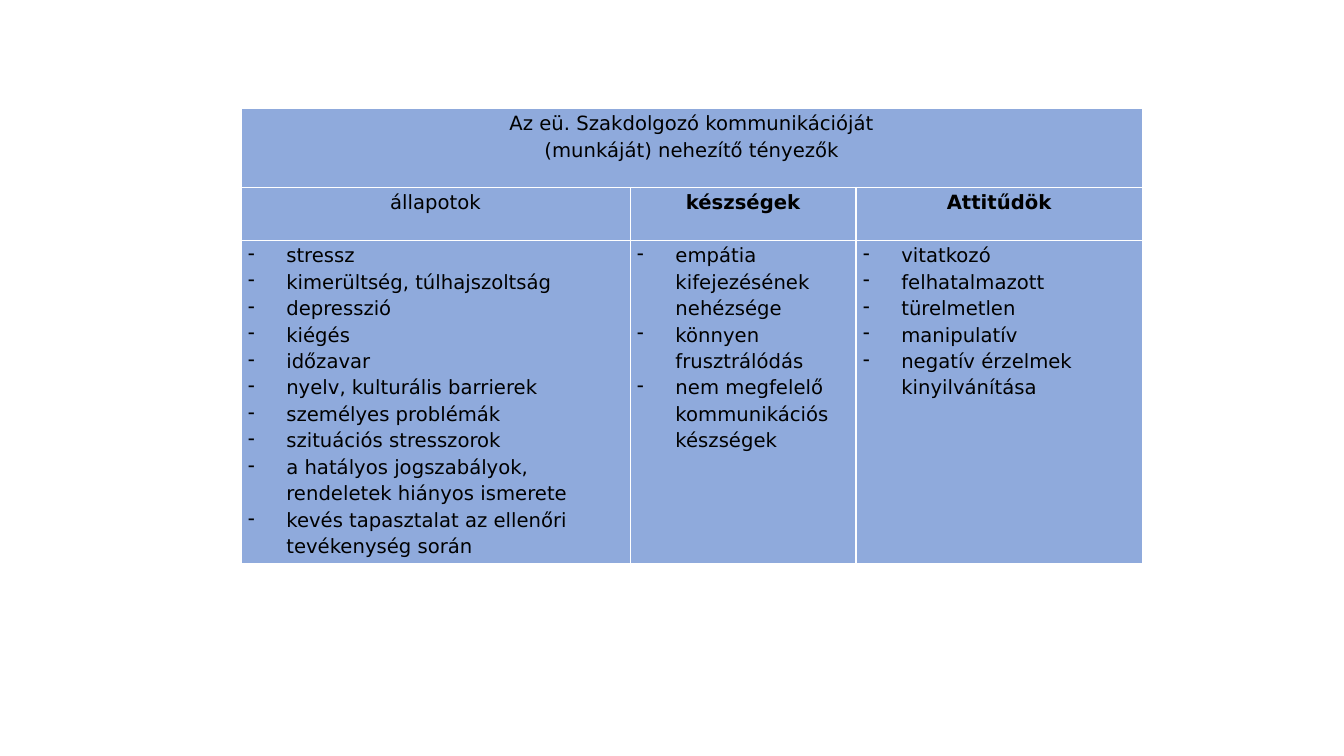
from lxml import etree
from pptx import Presentation
from pptx.dml.color import RGBColor
from pptx.enum.text import PP_ALIGN
from pptx.oxml.ns import qn
from pptx.util import Inches, Pt

CENTER, LEFT = PP_ALIGN.CENTER, PP_ALIGN.LEFT
BLUE = RGBColor(0x8F, 0xAA, 0xDC)
BLACK = RGBColor(0, 0, 0)
WHITE = RGBColor(0xFF, 0xFF, 0xFF)
FONT = "DejaVu Sans"
INDENT = Inches(0.38)
BORDER = Pt(1)

COLUMN_WIDTHS = [3.86, 2.24, 2.84]
ROW_HEIGHTS = [0.78, 0.53, 3.2]
HEADING = ["Az eü. Szakdolgozó kommunikációját", "(munkáját) nehezítő tényezők"]
FACTORS = {
    "állapotok": [
        "stressz",
        "kimerültség, túlhajszoltság",
        "depresszió",
        "kiégés",
        "időzavar",
        "nyelv, kulturális barrierek",
        "személyes problémák",
        "szituációs stresszorok",
        "a hatályos jogszabályok, rendeletek hiányos ismerete",
        "kevés tapasztalat az ellenőri tevékenység során",
    ],
    "készségek": [
        "empátia kifejezésének nehézsége",
        "könnyen frusztrálódás",
        "nem megfelelő kommunikációs készségek",
    ],
    "Attitűdök": [
        "vitatkozó",
        "felhatalmazott",
        "türelmetlen",
        "manipulatív",
        "negatív érzelmek kinyilvánítása",
    ],
}


def write(cell, lines, align=CENTER, bold=False, bullet=None):
    frame = cell.text_frame
    frame.text = "\n".join(lines)
    for paragraph in frame.paragraphs:
        paragraph.alignment = align
        paragraph.line_spacing = 1.15
        font = paragraph.runs[0].font
        font.name, font.size, font.bold = FONT, Pt(14), bold
        font.color.rgb = BLACK
        if bullet:
            properties = paragraph._p.get_or_add_pPr()
            properties.set("marL", str(INDENT))
            properties.set("indent", str(-INDENT))
            etree.SubElement(properties, qn("a:buChar"), char=bullet)


def style_cell(cell):
    """Give the cell its margins, white borders and blue fill."""
    cell.margin_left = cell.margin_right = Inches(0.07)
    cell.margin_top = cell.margin_bottom = 0
    properties = cell._tc.get_or_add_tcPr()
    for side in ("a:lnL", "a:lnR", "a:lnT", "a:lnB"):
        line = etree.SubElement(properties, qn(side), w=str(BORDER))
        solid = etree.SubElement(line, qn("a:solidFill"))
        etree.SubElement(solid, qn("a:srgbClr"), val=str(WHITE))
    cell.fill.solid()
    cell.fill.fore_color.rgb = BLUE


prs = Presentation()
prs.slide_width, prs.slide_height = Inches(13.33), Inches(7.5)
blank_layout = prs.slide_layouts[6]
slide = prs.slides.add_slide(blank_layout)

factors_table = slide.shapes.add_table(
    len(ROW_HEIGHTS), len(COLUMN_WIDTHS), Inches(2.39), Inches(1.08),
    Inches(sum(COLUMN_WIDTHS)), Inches(sum(ROW_HEIGHTS))).table
for column, width in zip(factors_table.columns, COLUMN_WIDTHS):
    column.width = Inches(width)
for row, height in zip(factors_table.rows, ROW_HEIGHTS):
    row.height = Inches(height)
for cell in factors_table.iter_cells():
    style_cell(cell)

heading_cell = factors_table.cell(0, 0)
heading_cell.merge(factors_table.cell(0, len(COLUMN_WIDTHS) - 1))
write(heading_cell, HEADING)
for index, (group, factors) in enumerate(FACTORS.items()):
    write(factors_table.cell(1, index), [group], bold=index > 0)
    write(factors_table.cell(2, index), factors, align=LEFT, bullet="-")

prs.save("out.pptx")
